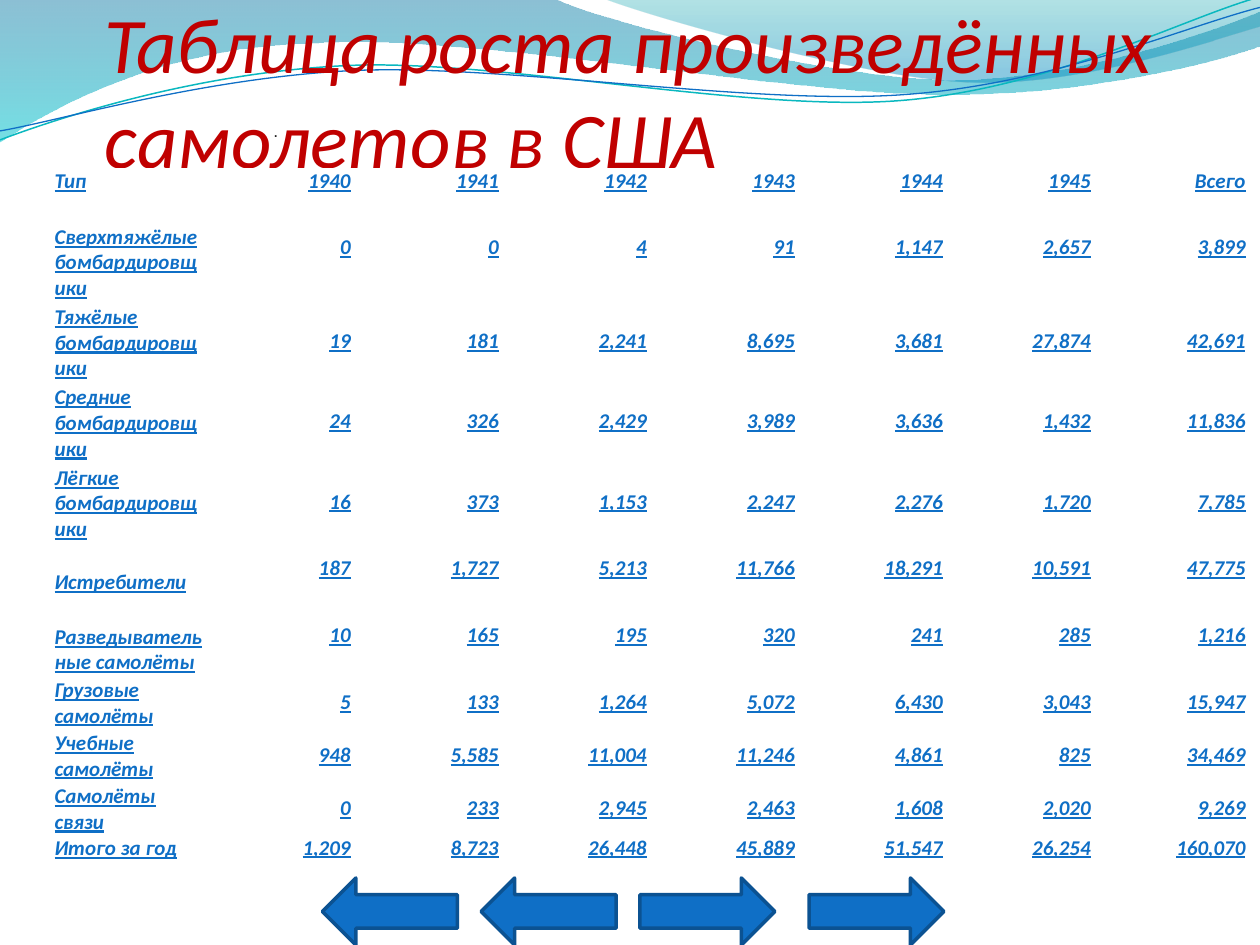
import math

import pptx
import pptx.dml.color
import pptx.enum.shapes
import pptx.enum.text
import pptx.oxml.ns
import pptx.util
from lxml import etree

Cm = pptx.util.Cm
Pt = pptx.util.Pt
RGBColor = pptx.dml.color.RGBColor
Anchor = pptx.enum.text.MSO_ANCHOR
Align = pptx.enum.text.PP_ALIGN
Shape = pptx.enum.shapes.MSO_SHAPE
qn = pptx.oxml.ns.qn

BLUE = RGBColor(0x0F, 0x6F, 0xC6)
DARK_BLUE = RGBColor(0x0B, 0x52, 0x92)
TEAL = RGBColor(0x0A, 0xB8, 0xBF)
RED = RGBColor(0xC0, 0x00, 0x00)
INK = RGBColor(0x22, 0x22, 0x22)
WHITE = RGBColor(0xFF, 0xFF, 0xFF)
WAVE_BLUE = RGBColor(0x00, 0x74, 0xA1)
WAVE_CYAN = RGBColor(0x00, 0xC6, 0xCF)
WAVE_TEAL = RGBColor(0x00, 0xA1, 0xA9)
WAVE_SKY = RGBColor(0x00, 0x8B, 0xBF)

deck = pptx.Presentation()
deck.slide_width = Cm(25.4)
deck.slide_height = Cm(19.05)
page = deck.slides.add_slide(deck.slide_layouts[5])
shapes = page.shapes


def draw_wave(start, segments, close):
    corners = [start]
    for segment in segments:
        corners.extend(zip(segment[::2], segment[1::2]))
    corners = [(Cm(x), Cm(y)) for x, y in corners]
    builder = shapes.build_freeform(*corners[0])
    builder.add_line_segments(corners[1:], close=close)
    wave = builder.convert_to_shape()
    wave.shadow.inherit = False
    lines = iter(list(wave._element.spPr.iter(qn("a:lnTo"))))
    for segment in segments:
        line = next(lines)
        if len(segment) == 6:
            line.addprevious(curve := etree.Element(qn("a:cubicBezTo")))
            for part in (line, next(lines), next(lines)):
                curve.append(part[0])
                part.getparent().remove(part)
    return wave


bands = [
    ((0, 0),
     [(11.18, -0.03), (12.09, 0.43, 16.87, 1.6, 19.25, 1.6),
      (21.67, 1.6, 24.33, 0.66, 25.4, 0.23), (25.43, 0.91),
      (24.97, 1.12, 22.1, 1.93, 18.95, 1.9), (15.8, 1.9, 9.7, 0.71, 6.53, 0.86),
      (3.28, 0.91, 1.17, 2.11, -0.03, 2.87)],
     [(0, WAVE_BLUE, 45), (1, WAVE_CYAN, 55)]),
    ((12.17, -0.03),
     [(12.93, 0.28, 17.32, 1.57, 19.53, 1.65),
      (21.74, 1.75, 24.41, 0.81, 25.4, 0.53), (25.4, 0)],
     [(0, WAVE_TEAL, 30), (0.8, WAVE_SKY, 45)]),
]
for start, segments, stops in bands:
    band = draw_wave(start, segments, True)
    band.line.fill.background()
    band.fill.gradient()
    band.fill.gradient_angle = 270
    for stop, (position, color, _) in zip(band.fill.gradient_stops, stops):
        stop.position = position
        stop.color.rgb = color
    colors = band._element.spPr.iter(qn("a:srgbClr"))
    for color, (_, _, opacity) in zip(colors, stops):
        etree.SubElement(color, qn("a:alpha"), val=str(opacity * 1000))

TILT = 2.7
cosine, sine = math.cos(math.radians(TILT)), math.sin(math.radians(TILT))
strands = [
    ((12.67, 1.46),
     [(0, 2.82), (1.22, 2.36), (4.01, 1.45), (7.04, 1.32), (10.03, 1.19),
      (15.06, 2.26), (18.11, 2.03), (21.16, 1.8), (23.83, 0.38), (25.35, -0.05)],
     TEAL, 0.85),
    ((12.69, 1.5),
     [(0, 2.64), (1.19, 2.44), (4.17, 1.55), (7.19, 1.42), (10.24, 1.3),
      (15.16, 2.13), (18.21, 1.91), (21.23, 1.7), (23.9, 0.53), (25.4, 0.15)],
     BLUE, 0.75),
]
for (center_x, center_y), points, color, width in strands:
    level = [(center_x + (x - center_x) * cosine - (y - center_y) * sine,
              center_y + (x - center_x) * sine + (y - center_y) * cosine)
             for x, y in points]
    curves = [level[i] + level[i + 1] + level[i + 2] for i in (1, 4, 7)]
    strand = draw_wave(level[0], curves, False)
    strand.rotation = 360 - TILT
    strand.fill.background()
    strand.line.color.rgb = color
    strand.line.width = Pt(width)

title = shapes.title
shapes._spTree.append(title._element)
title.left, title.top, title.width, title.height = Cm(2.11), Cm(0.53), Cm(22.86), Cm(3.18)
frame = title.text_frame
frame.text = "Таблица роста произведённых самолетов в США"
frame.auto_size = pptx.enum.text.MSO_AUTO_SIZE.NONE
frame.word_wrap = True
frame.vertical_anchor = Anchor.BOTTOM
frame.margin_left = frame.margin_right = frame.margin_bottom = 0
frame.margin_top = Cm(0.13)
para = frame.paragraphs[0]
para.alignment = Align.LEFT
font = para.runs[0].font
font.name, font.size, font.italic = "Calibri", Pt(45), True
font.color.rgb = RED

rows = [
    (0.53, "Тип", "1940 1941 1942 1943 1944 1945 Всего"),
    (2.15, "Сверхтяжёлые бомбардировщики", "0 0 4 91 1,147 2,657 3,899"),
    (1.62, "Тяжёлые бомбардировщики", "19 181 2,241 8,695 3,681 27,874 42,691"),
    (1.62, "Средние бомбардировщики", "24 326 2,429 3,989 3,636 1,432 11,836"),
    (1.62, "Лёгкие бомбардировщики", "16 373 1,153 2,247 2,276 1,720 7,785"),
    (1.07, "Истребители", "187 1,727 5,213 11,766 18,291 10,591 47,775"),
    (1.62, "Разведывательные самолёты", "10 165 195 320 241 285 1,216"),
    (1.07, "Грузовые самолёты", "5 133 1,264 5,072 6,430 3,043 15,947"),
    (1.07, "Учебные самолёты", "948 5,585 11,004 11,246 4,861 825 34,469"),
    (1.07, "Самолёты связи", "0 233 2,945 2,463 1,608 2,020 9,269"),
    (0.53, "Итого за год", "1,209 8,723 26,448 45,889 51,547 26,254 160,070"),
]
TABLE_WIDTH, TOTAL_WIDTH = 24.01, 3.12
table = shapes.add_table(len(rows), 8, Cm(1.1), Cm(3.39), Cm(TABLE_WIDTH), Cm(13.97)).table
table.first_row = table.horz_banding = False
for column in table.columns:
    column.width = Cm((TABLE_WIDTH - TOTAL_WIDTH) / 7)
table.columns[7].width = Cm(TOTAL_WIDTH)
for row_index, (height, kind, counts) in enumerate(rows):
    table.rows[row_index].height = Cm(height)
    for column_index, text in enumerate([kind] + counts.split()):
        cell = table.cell(row_index, column_index)
        cell.margin_left = cell.margin_right = cell.margin_top = cell.margin_bottom = 0
        for side in "LRTB":
            border = etree.SubElement(cell._tc.tcPr, qn("a:ln" + side))
            etree.SubElement(border, qn("a:noFill"))
        cell.fill.solid()
        cell.fill.fore_color.rgb = WHITE
        header = row_index == 0 or column_index == 0
        cell.vertical_anchor = Anchor.BOTTOM if header else Anchor.MIDDLE
        para = cell.text_frame.paragraphs[0]
        para.text = text
        para.alignment = Align.RIGHT if column_index else Align.LEFT
        font = para.runs[0].font
        font.name, font.size = "Calibri", Pt(12)
        font.bold = font.italic = font.underline = True
        font.color.rgb = BLUE

dot = shapes.add_textbox(Cm(5.26), Cm(2.29), Cm(0.61), Cm(2.24))
dot.text_frame.text = "."
dot.text_frame.word_wrap = False
font = dot.text_frame.paragraphs[0].runs[0].font
font.name, font.size = "Arial", Pt(10)
font.color.rgb = INK

arrows = [(16.31, Shape.RIGHT_ARROW), (6.5, Shape.LEFT_ARROW),
          (12.9, Shape.RIGHT_ARROW), (9.7, Shape.LEFT_ARROW)]
for left, kind in arrows:
    arrow = shapes.add_shape(kind, Cm(left), Cm(17.7), Cm(2.72), Cm(1.35))
    arrow.shadow.inherit = False
    arrow.fill.solid()
    arrow.fill.fore_color.rgb = BLUE
    arrow.line.color.rgb = DARK_BLUE
    arrow.line.width = Pt(2)

deck.save("out.pptx")
